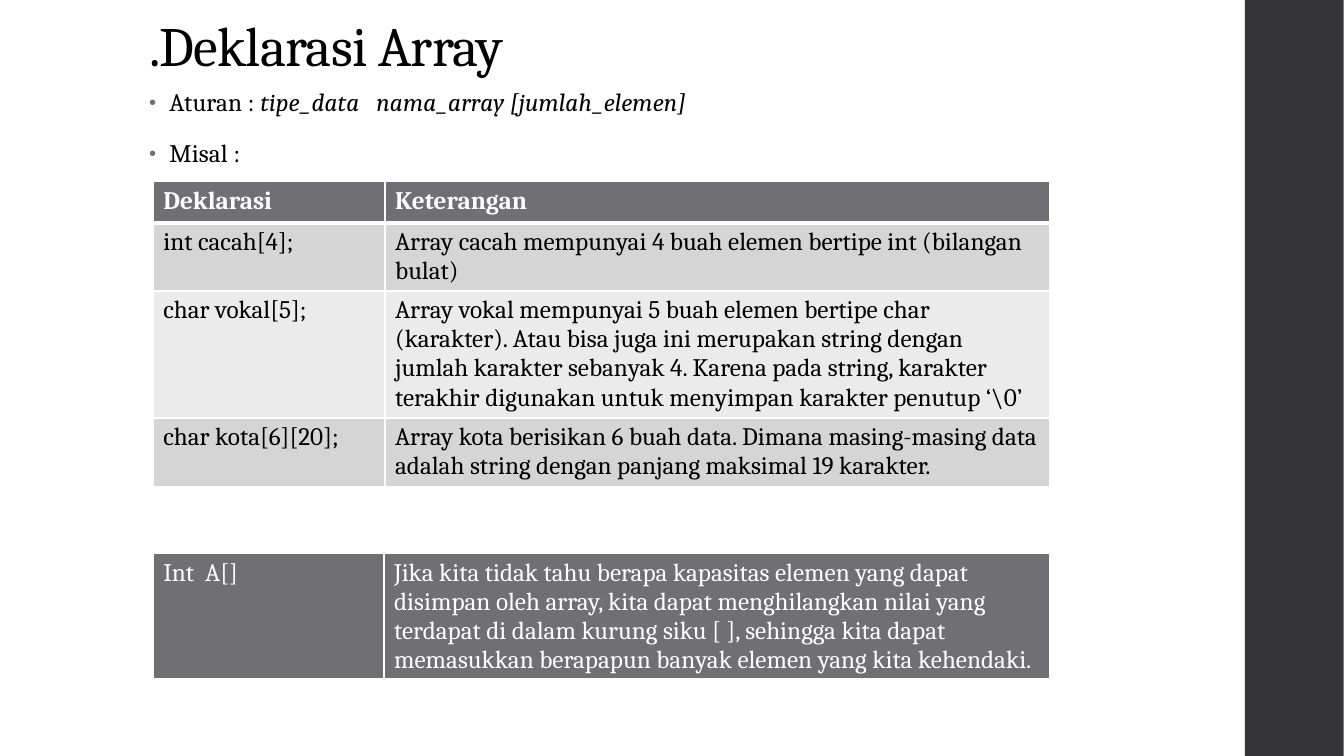
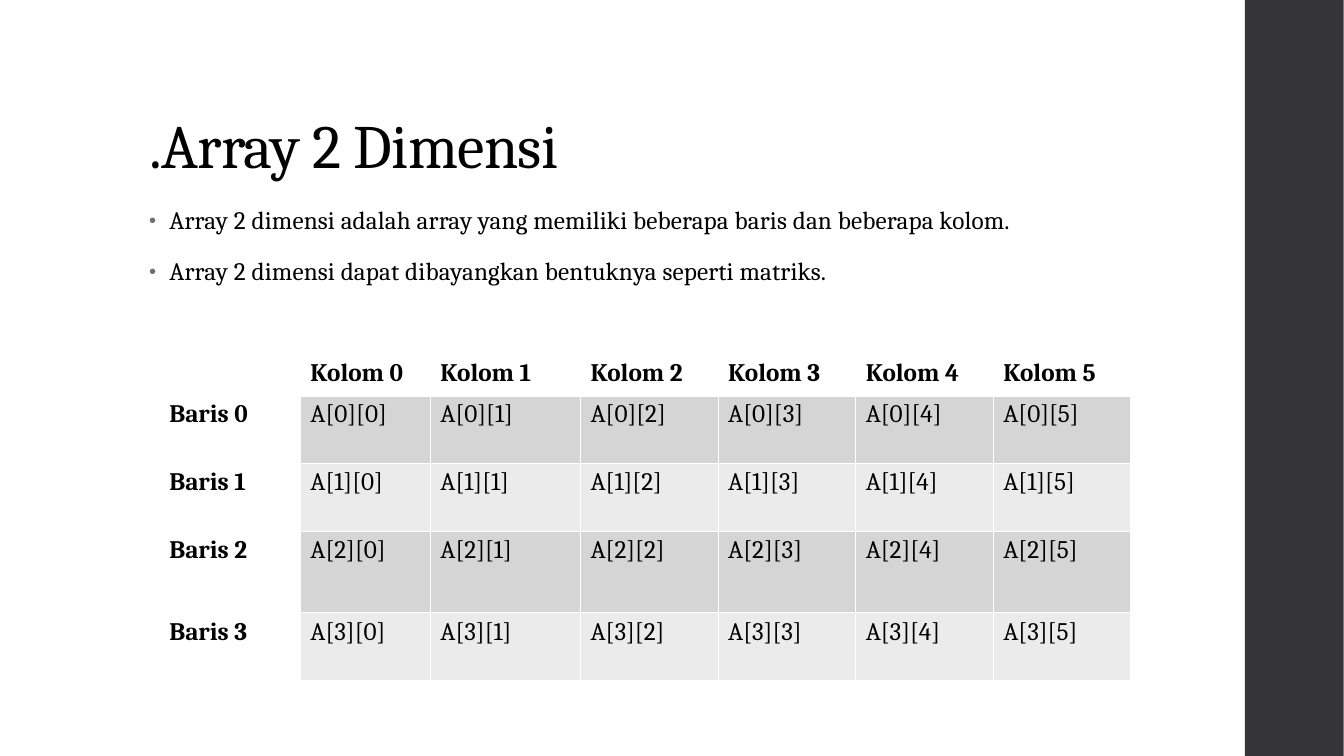
from lxml import etree
from pptx import Presentation
from pptx.dml.color import RGBColor
from pptx.enum.shapes import MSO_SHAPE
from pptx.enum.text import MSO_ANCHOR, MSO_AUTO_SIZE, PP_ALIGN
from pptx.oxml.ns import qn
from pptx.util import Inches, Pt

RECT = MSO_SHAPE.RECTANGLE
TOP, BOTTOM = MSO_ANCHOR.TOP, MSO_ANCHOR.BOTTOM
LEFT = PP_ALIGN.LEFT
NO_FIT = MSO_AUTO_SIZE.NONE

# Shared look
BLACK, WHITE = "000000", "FFFFFF"
DARK, GREY = "353537", "6F6F74"
BANDS = ["D5D5D6", "EBEBEB"]
FONT = {"name": "Cambria", "size": Pt(18), "bold": False}
BULLET = {"line_spacing": 0.95, "space_after": Pt(2)}
MARGIN = 13.8  # left edge of titles and lists, in grid cells


def grid(*cells):
    """Turn grid cells (ten to the inch) into slide lengths."""
    return [Inches(n / 10) for n in cells]


def rgb(color):
    return RGBColor.from_string(color)


def apply(target, values):
    for name, value in values.items():
        setattr(target, name, value)


def place(shape, *box):
    apply(shape, dict(zip(("left", "top", "width", "height"), grid(*box))))


def child(parent, tag, **attrs):
    return etree.SubElement(parent, qn(tag), attrs)


def add_run(p, text, color=BLACK, spacing=None, **font):
    r = p.add_run()
    r.text = text
    apply(r.font, {**FONT, **font})
    r.font.color.rgb = rgb(color)
    if spacing is not None:
        r._r.get_or_add_rPr().set("spc", str(spacing))


def set_title(s, text, box, size):
    title = s.shapes.title
    place(title, *box)
    tf = title.text_frame
    apply(tf, {"vertical_anchor": BOTTOM, "auto_size": NO_FIT})
    p = tf.paragraphs[0]
    apply(p, {"alignment": LEFT, "line_spacing": 0.9})
    add_run(p, text, spacing=-50, size=Pt(size))


def set_bullets(s, items, box):
    """Fill the body; each item is a list of (text, italic) runs."""
    body = s.placeholders[1]
    place(body, *box)
    tf = body.text_frame
    apply(tf, {"vertical_anchor": TOP, "auto_size": NO_FIT})
    for i, runs in enumerate(items):
        p = tf.add_paragraph() if i else tf.paragraphs[0]
        apply(p, {**BULLET, "space_before": Pt(14 if i else 0)})
        pPr = p._p.get_or_add_pPr()
        pPr.set("marL", str(Inches(0.2)))
        pPr.set("indent", str(Inches(-0.2)))
        child(child(pPr, "a:buClr"), "a:srgbClr", val=GREY)
        child(pPr, "a:buSzPct", val="80000")
        child(pPr, "a:buChar", char="•")
        for text, italic in runs:
            add_run(p, text, spacing=10, italic=italic)


def set_borders(cell, bottom):
    tcPr = cell._tc.get_or_add_tcPr()
    for side, width in zip("LRTB", (1, 1, 1, bottom)):
        line = child(tcPr, f"a:ln{side}", w=str(Pt(width)))
        child(child(line, "a:solidFill"), "a:srgbClr", val=WHITE)


def add_grid_table(s, rows, left, top, widths, heights, cell_style):
    """cell_style(row, column) gives fill (or None), text colour and bold."""
    frame = s.shapes.add_table(len(rows), len(widths), *grid(
        left, top, sum(widths), sum(heights)))
    table = frame.table
    apply(table, {"first_row": False, "horz_banding": False})
    for column, width in zip(table.columns, grid(*widths)):
        column.width = width
    for row, height in zip(table.rows, grid(*heights)):
        row.height = height
    for i, texts in enumerate(rows):
        for j, text in enumerate(texts):
            cell = table.cell(i, j)
            fill, color, bold = cell_style(i, j)
            set_borders(cell, 1 if i else 3)
            if fill:
                cell.fill.solid()
                cell.fill.fore_color.rgb = rgb(fill)
            else:
                cell.fill.background()
            if text:
                add_run(cell.text_frame.paragraphs[0], text, color, bold=bold)


def band_fill(row):
    return BANDS[(row - 1) % 2]


def list_style(row, column):
    if row == 0:
        return GREY, WHITE, True
    return band_fill(row), BLACK, False


def note_style(row, column):
    return GREY, WHITE, False


def matrix_style(row, column):
    if row == 0 or column == 0:
        return None, BLACK, True
    return band_fill(row), BLACK, False


def add_side_band(s, layout):
    """Draw the dark band and move it to the layout, behind all else."""
    band = s.shapes.add_shape(RECT, *grid(123.5, 0, 9.8, 75))
    band.shadow.inherit = False
    band.fill.solid()
    band.fill.fore_color.rgb = rgb(DARK)
    band.line.fill.background()
    for ph in list(layout.placeholders):
        if ph.placeholder_format.idx >= 10:
            ph.element.getparent().remove(ph.element)
    layout.shapes.element.insert(2, band.element)


def build_declaration(s):
    set_title(s, ".Deklarasi Array", (MARGIN, 4, 104.9, 4.3), 39.6)
    set_bullets(s, [
        [("Aturan : ", False),
         ("tipe_data   nama_array [jumlah_elemen]", True)],
        [("Misal :", False)],
    ], (MARGIN, 8.3, 96.3, 68.7 - 2))
    add_grid_table(s, [
        ("Deklarasi", "Keterangan"),
        ("int cacah[4];",
         "Array cacah mempunyai 4 buah elemen bertipe int (bilangan bulat)"),
        ("char vokal[5];",
         "Array vokal mempunyai 5 buah elemen bertipe char (karakter). Atau "
         "bisa juga ini merupakan string dengan jumlah karakter sebanyak 4. "
         "Karena pada string, karakter terakhir digunakan untuk menyimpan "
         "karakter penutup ‘\\0’"),
        ("char kota[6][20];",
         "Array kota berisikan 6 buah data. Dimana masing-masing data adalah "
         "string dengan panjang maksimal 19 karakter."),
    ], 15.2, 18, (23, 65.9), (4.1, 6.7, 12.6, 6.7), list_style)
    add_grid_table(s, [
        ("Int  A[]",
         "Jika kita tidak tahu berapa kapasitas elemen yang dapat disimpan "
         "oleh array, kita dapat menghilangkan nilai yang terdapat di dalam "
         "kurung siku [ ], sehingga kita dapat memasukkan berapapun banyak "
         "elemen yang kita kehendaki."),
    ], 15.2, 54.9, (22.9, 66), (12.3,), note_style)


def build_matrix(s):
    set_title(s, ".Array 2 Dimensi", (MARGIN, 4, 106, 14.5), 44)
    set_bullets(s, [
        [("Array 2 dimensi adalah array yang memiliki beberapa baris dan "
          "beberapa kolom.", False)],
        [("Array 2 dimensi dapat dibayangkan bentuknya seperti matriks.",
          False)],
    ], (MARGIN, 20, 94, 47.6))
    columns = range(6)
    rows = [[""] + [f"Kolom {j}" for j in columns]]
    rows += [[f"Baris {i}"] + [f"A[{i}][{j}]" for j in columns]
             for i in range(4)]
    add_grid_table(s, rows, 15.8, 35.1, [14, 12.9, 14.9] + [13.65] * 4,
                   (4.1, 6.75, 6.75, 8.1, 6.75), matrix_style)


def main():
    prs = Presentation()
    prs.slide_width, prs.slide_height = grid(133.33, 75)
    layout = prs.slide_layouts[1]
    for i, build in enumerate((build_declaration, build_matrix)):
        s = prs.slides.add_slide(layout)
        if i == 0:
            add_side_band(s, layout)
        build(s)
    prs.save("out.pptx")


if __name__ == "__main__":
    main()
